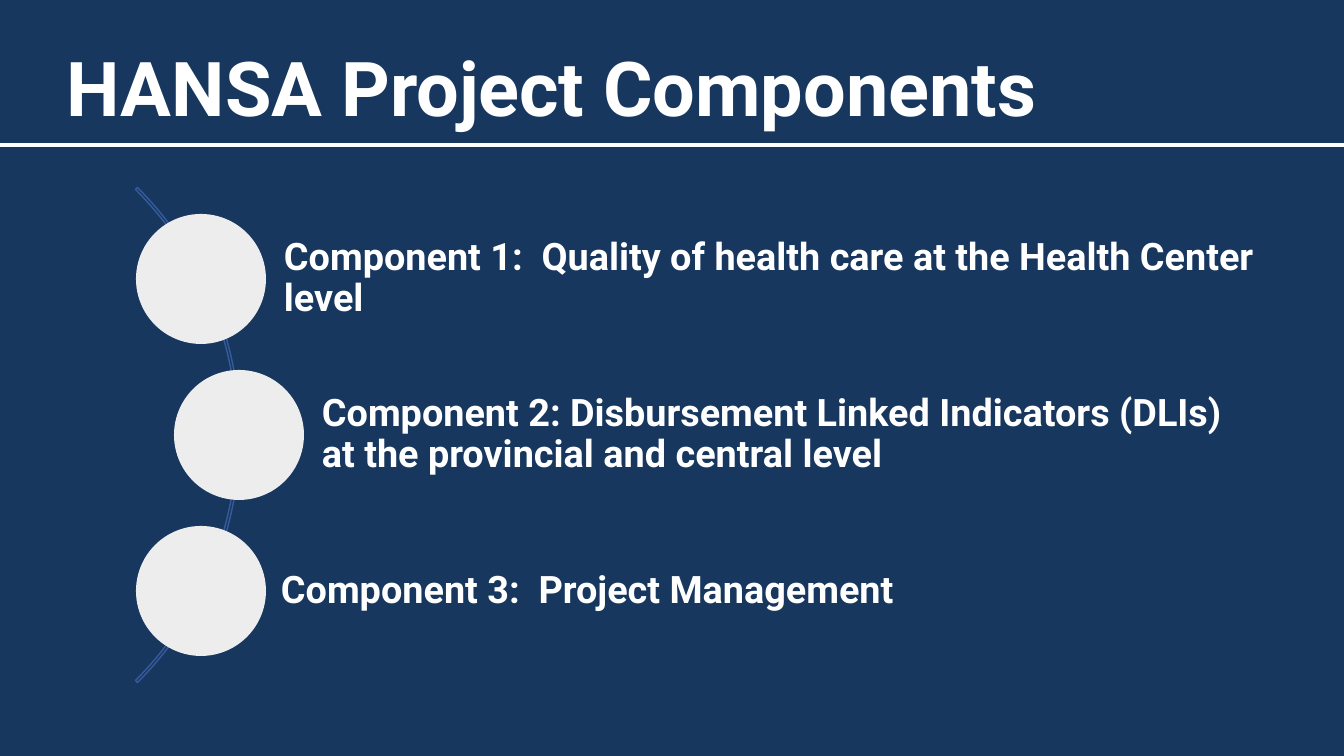
from dataclasses import dataclass

from lxml import etree
from pptx import Presentation
from pptx import util as u
from pptx.dml.color import RGBColor
from pptx.enum import shapes, text
from pptx.oxml import ns

SLIDE_W, SLIDE_H = 1344, 756
EMU_PER_PX = 914400 / 100.8


@dataclass(frozen=True)
class Theme:
    font: str = "Roboto"
    navy: RGBColor = RGBColor(0x17, 0x37, 0x5E)
    white: RGBColor = RGBColor(0xFF, 0xFF, 0xFF)
    disc: RGBColor = RGBColor(0xED, 0xED, 0xED)
    arc: RGBColor = RGBColor(0x36, 0x5B, 0x9D)
    title_size: int = 54
    label_size: int = 27


THEME = Theme()

COMPONENTS = [
    ("Component 1:  Quality of health care at the Health Center level", 65, 65),
    ("Component 2: Disbursement Linked Indicators (DLIs) at the provincial and central level", 103, 103),
    ("Component 3:  Project Management", 65, 62),
]


def px(length):
    return u.Emu(round(length * EMU_PER_PX))


def add_plain(slide, kind, box, fill=None):
    plain = slide.shapes.add_shape(kind, *map(px, box))
    plain.shadow.inherit = False
    plain.line.fill.background()
    if fill is None:
        plain.fill.background()
    else:
        plain.fill.solid()
        plain.fill.fore_color.rgb = fill
    return plain


def write(frame, words, size, anchor, insets):
    frame.word_wrap = True
    frame.vertical_anchor = anchor
    frame.margin_left, frame.margin_top, frame.margin_right, frame.margin_bottom = map(px, insets)
    line = frame.paragraphs[0]
    line.text = words
    line.alignment = text.PP_ALIGN.LEFT
    line.line_spacing = 0.9
    line.font.name = THEME.font
    line.font.size = u.Pt(size)
    line.font.bold = True
    line.font.color.rgb = THEME.white


def add_header(slide, left, top, width, height):
    title = slide.shapes.add_textbox(*map(px, (left + 57, top + 17, width - 83, height - 24)))
    write(title.text_frame, "HANSA Project Components", THEME.title_size,
          text.MSO_ANCHOR.BOTTOM, (10, 5, 10, 5))
    bottom = px(top + height)
    rule = slide.shapes.add_connector(shapes.MSO_CONNECTOR.STRAIGHT,
                                      px(left), bottom, px(left + width), bottom)
    rule.line.color.rgb = THEME.white
    rule.line.width = u.Pt(3)
    etree.SubElement(rule._element.spPr, ns.qn("a:effectLst"))


def add_components(slide, left, top, width, height):
    arc_size, disc, label_height, pitch = 700, 130, 104, 156
    middle = top + height / 2
    arc = add_plain(slide, shapes.MSO_SHAPE.BLOCK_ARC,
                    (left - 596, middle - arc_size / 2, arc_size, arc_size))
    arc.line.color.rgb = THEME.arc
    arc.line.width = u.Pt(1)
    for index, angle_or_depth in enumerate((189, 27, 0.004)):
        arc.adjustments[index] = angle_or_depth

    for row, (words, disc_x, label_x) in enumerate(COMPONENTS):
        center = middle + (row - 1) * pitch
        label_width = width - max(disc_x, 65)
        label = add_plain(slide, shapes.MSO_SHAPE.RECTANGLE,
                          (left + label_x, center - label_height / 2, label_width, label_height),
                          THEME.navy)
        write(label.text_frame, words, THEME.label_size, text.MSO_ANCHOR.MIDDLE, (83, 7, 7, 7))
        add_plain(slide, shapes.MSO_SHAPE.OVAL,
                  (left + disc_x - disc / 2, center - disc / 2, disc, disc), THEME.disc)


def main():
    deck = Presentation()
    deck.slide_width, deck.slide_height = px(SLIDE_W), px(SLIDE_H)
    slide = deck.slides.add_slide(deck.slide_layouts[6])
    slide.background.fill.solid()
    slide.background.fill.fore_color.rgb = THEME.navy
    add_header(slide, 0, 0, SLIDE_W, 145)
    add_components(slide, 136, 187, 1128, 496)
    deck.save("out.pptx")


if __name__ == "__main__":
    main()
